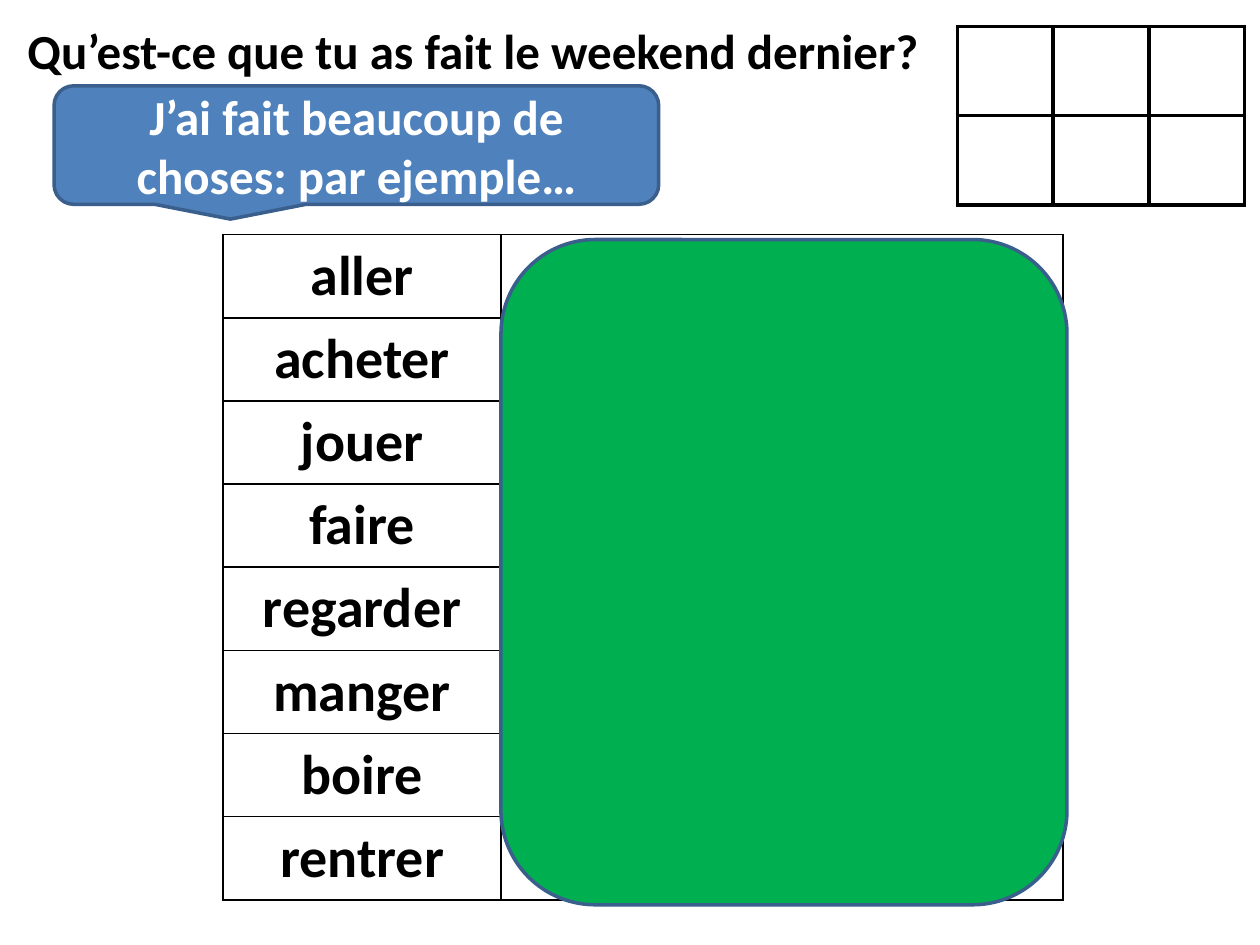
import pptx
import pptx.util
from lxml import etree
from pptx.dml.color import RGBColor
from pptx.enum.shapes import MSO_SHAPE
from pptx.enum.text import MSO_ANCHOR, PP_ALIGN
from pptx.oxml.ns import qn
from pptx.util import Cm, Pt

FONT = "Calibri"
COLORS = {
    "text": "000000",
    "border": "000000",
    "callout": "4F81BD",
    "callout_text": "FFFFFF",
    "cover": "00B050",
    "outline": "3A5F8C",
}
VERBS = ["aller", "acheter", "jouer", "faire",
         "regarder", "manger", "boire", "rentrer"]


def color(name):
    return RGBColor.from_string(COLORS[name])


def set_text(text_frame, text, size, color_name, alignment, anchor):
    text_frame.text = text
    text_frame.word_wrap = True
    text_frame.vertical_anchor = anchor
    paragraph = text_frame.paragraphs[0]
    paragraph.alignment = alignment
    font = paragraph.runs[0].font
    font.name, font.size, font.bold = FONT, Pt(size), True
    font.color.rgb = color(color_name)


def set_borders(cell, width):
    properties = cell._tc.get_or_add_tcPr()
    for side in ("a:lnL", "a:lnR", "a:lnT", "a:lnB"):
        line = etree.SubElement(properties, qn(side), w=str(Pt(width)))
        fill = etree.SubElement(line, qn("a:solidFill"))
        etree.SubElement(fill, qn("a:srgbClr"), val=COLORS["border"])


def add_grid(slide, left, top, column_widths, row_height, row_count, border):
    """Add an unfilled table whose cells all have the same border."""
    table = slide.shapes.add_table(
        row_count, len(column_widths), Cm(left), Cm(top),
        Cm(sum(column_widths)), Cm(row_height * row_count)).table
    table.first_row = table.horz_banding = False
    for column, width in zip(table.columns, column_widths):
        column.width = Cm(width)
    for row in table.rows:
        row.height = Cm(row_height)
    for cell in table.iter_cells():
        set_borders(cell, border)
        cell.fill.background()
    return table


def add_box(slide, kind, left, top, width, height, fill_name):
    shape = slide.shapes.add_shape(
        kind, Cm(left), Cm(top), Cm(width), Cm(height))
    shape.shadow.inherit = False
    shape.fill.solid()
    shape.fill.fore_color.rgb = color(fill_name)
    shape.line.color.rgb = color("outline")
    shape.line.width = Pt(2)
    return shape


def place_title(slide, left, top, width, height):
    title = slide.shapes.title
    title.left, title.top = Cm(left), Cm(top)
    title.width, title.height = Cm(width), Cm(height)
    set_text(title.text_frame, "Qu’est-ce que tu as fait le weekend dernier?",
             28, "text", PP_ALIGN.LEFT, MSO_ANCHOR.TOP)


def add_score_grid(slide, left, top, width, height):
    add_grid(slide, left, top, [width / 3] * 3, height / 2, 2, 2.25)


def add_verb_table(slide, left, top, width, height):
    verb_width = 5.6
    table = add_grid(slide, left, top, [verb_width, width - verb_width],
                     height / len(VERBS), len(VERBS), 1)
    for row, verb in enumerate(VERBS):
        cell = table.cell(row, 0)
        set_text(cell.text_frame, verb, 32, "text",
                 PP_ALIGN.CENTER, None)
        cell.vertical_anchor = MSO_ANCHOR.MIDDLE
    # Panel hiding the answer column
    add_box(slide, MSO_SHAPE.ROUNDED_RECTANGLE, left + verb_width, top + 0.1,
            width - verb_width + 0.08, height, "cover")


def add_callout(slide, left, top, width, height):
    callout = add_box(slide, MSO_SHAPE.ROUNDED_RECTANGULAR_CALLOUT,
                      left, top, width, height, "callout")
    set_text(callout.text_frame, "J’ai fait beaucoup de choses: par ejemple…",
             28, "callout_text", PP_ALIGN.CENTER, MSO_ANCHOR.MIDDLE)


def main():
    presentation = pptx.Presentation()
    presentation.slide_width, presentation.slide_height = Cm(25.4), Cm(19.05)
    slide = presentation.slides.add_slide(presentation.slide_layouts[5])

    place_title(slide, 0.3, 0.28, 23.8, 1.45)
    add_score_grid(slide, 19.3, 0.53, 5.79, 3.6)
    add_verb_table(slide, 4.5, 4.73, 16.93, 13.41)
    add_callout(slide, 1.09, 1.73, 12.19, 2.39)

    presentation.save("out.pptx")


if __name__ == "__main__":
    main()
